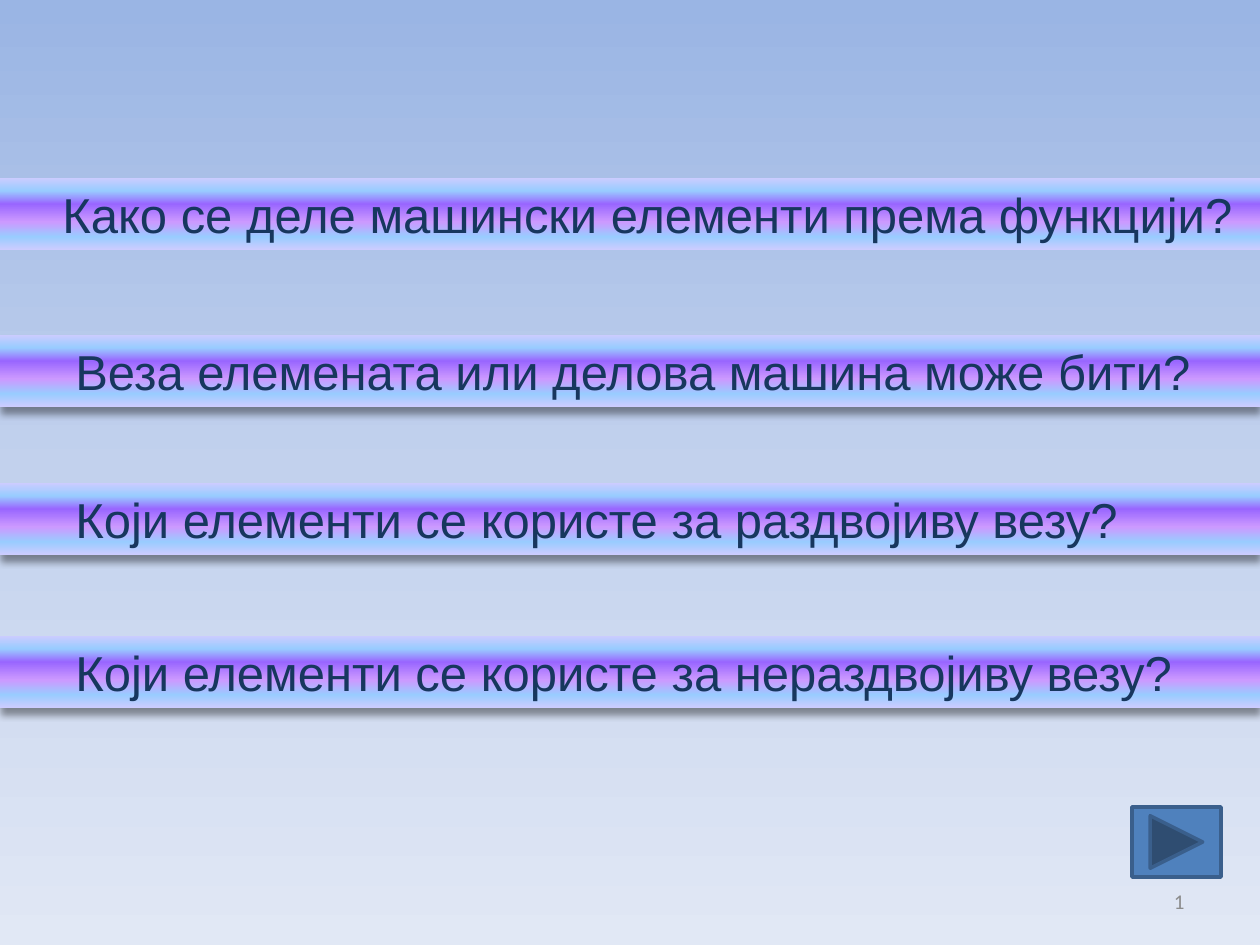
from lxml.etree import SubElement
from pptx import Presentation
from pptx.dml.color import RGBColor
from pptx.enum.shapes import MSO_SHAPE
from pptx.enum.text import MSO_ANCHOR, MSO_AUTO_SIZE, PP_ALIGN
from pptx.oxml.ns import qn
from pptx.util import Emu, Pt

PX = 914400 / 126
NAVY = RGBColor(0x17, 0x37, 0x5E)
GRAY = RGBColor(0x8C, 0x8C, 0x8C)
BLUE = RGBColor(0x4F, 0x81, 0xBD)
DARK_BLUE = RGBColor(0x3A, 0x5F, 0x8C)
BLACK = RGBColor(0, 0, 0)
SKY = RGBColor(0x99, 0xCC, 0xFF)
LAVENDER = RGBColor(0xCC, 0xCC, 0xFF)
VIOLET = RGBColor(0x99, 0x66, 0xFF)
ORCHID = RGBColor(0xCC, 0x99, 0xFF)

BACKGROUND = [(0, RGBColor(0x9A, 0xB5, 0xE4)), (50, RGBColor(0xC2, 0xD1, 0xED)),
              (100, RGBColor(0xE1, 0xE8, 0xF5))]
BAR = [(0, LAVENDER), (18, SKY), (36, VIOLET), (61, ORCHID), (82, SKY), (100, LAVENDER)]

QUESTION_FONT = {"name": "Arial", "size": Pt(28)}
NUMBER_FONT = {"name": "Calibri", "size": Pt(12)}

# Top of each bar and its question; the first bar is formatted apart
FIRST_QUESTION = (178, "Како се деле машински елементи према функцији?")
QUESTIONS = [
    (335, "Веза елемената или делова машина може бити?"),
    (483, "Који елементи се користе за раздвојиву везу?"),
    (636, "Који елементи се користе за нераздвојиву везу?"),
]


def px(n):
    return Emu(round(n * PX))


def box(*lengths):
    return [px(n) for n in lengths]


def set_gradient(fill, root, stops):
    """Fill from top to bottom with any number of colour stops."""
    fill.gradient()
    fill.gradient_angle = 270
    gs_list = root.find(".//" + qn("a:gsLst"))
    for gs in list(gs_list):
        gs_list.remove(gs)
    for pos, color in stops:
        gs = SubElement(gs_list, qn("a:gs"), pos=str(pos * 1000))
        SubElement(gs, qn("a:srgbClr"), val=str(color))


def add_shadow(sp):
    effects = sp._element.spPr.find(qn("a:effectLst"))
    shadow = SubElement(effects, qn("a:outerShdw"), blurRad=str(Pt(4)),
                        dist=str(Pt(4)), dir="5400000", rotWithShape="0")
    color = SubElement(shadow, qn("a:srgbClr"), val=str(BLACK))
    SubElement(color, qn("a:alpha"), val="40000")


def write(tf, text, align, font, color):
    tf.vertical_anchor = MSO_ANCHOR.MIDDLE
    p = tf.paragraphs[0]
    p.alignment = align
    r = p.add_run()
    r.text = text
    for name, value in font.items():
        setattr(r.font, name, value)
    r.font.color.rgb = color
    return p


def add_bar(s, left, top, width, text, wrap=True, shadow=True):
    sp = s.shapes.add_shape(MSO_SHAPE.RECTANGLE, *box(left, top, width, 72))
    sp.shadow.inherit = False
    set_gradient(sp.fill, sp._element, BAR)
    sp.line.fill.background()
    if shadow:
        add_shadow(sp)
    tf = sp.text_frame
    tf.word_wrap = wrap
    tf.auto_size = MSO_AUTO_SIZE.SHAPE_TO_FIT_TEXT
    p = write(tf, text, PP_ALIGN.JUSTIFY, QUESTION_FONT, NAVY)
    pPr = p._p.get_or_add_pPr()
    pPr.set("marL", "0")
    pPr.set("indent", str(px(63)))


def add_number(s, text):
    tf = s.shapes.add_textbox(*box(903, 876, 294, 50)).text_frame
    tf.word_wrap = True
    write(tf, text, PP_ALIGN.RIGHT, NUMBER_FONT, GRAY)


def add_next_button(s):
    sp = s.shapes.add_shape(MSO_SHAPE.ACTION_BUTTON_FORWARD_OR_NEXT,
                            *box(1132, 807, 89, 70))
    sp.shadow.inherit = False
    sp.fill.solid()
    sp.fill.fore_color.rgb = BLUE
    sp.line.color.rgb = DARK_BLUE
    sp.line.width = Pt(2)


def main():
    prs = Presentation()
    prs.slide_width, prs.slide_height = box(1260, 945)
    s = prs.slides.add_slide(prs.slide_layouts[6])
    set_gradient(s.background.fill, s._element, BACKGROUND)

    # First question: wider bar without shadow
    top, text = FIRST_QUESTION
    add_bar(s, -13, top, 1273, text, wrap=False, shadow=False)

    # Slide number and button
    add_number(s, "1")
    add_next_button(s)

    # Remaining questions
    for top, text in QUESTIONS:
        add_bar(s, 0, top, 1260, text)

    prs.save("out.pptx")


if __name__ == "__main__":
    main()
